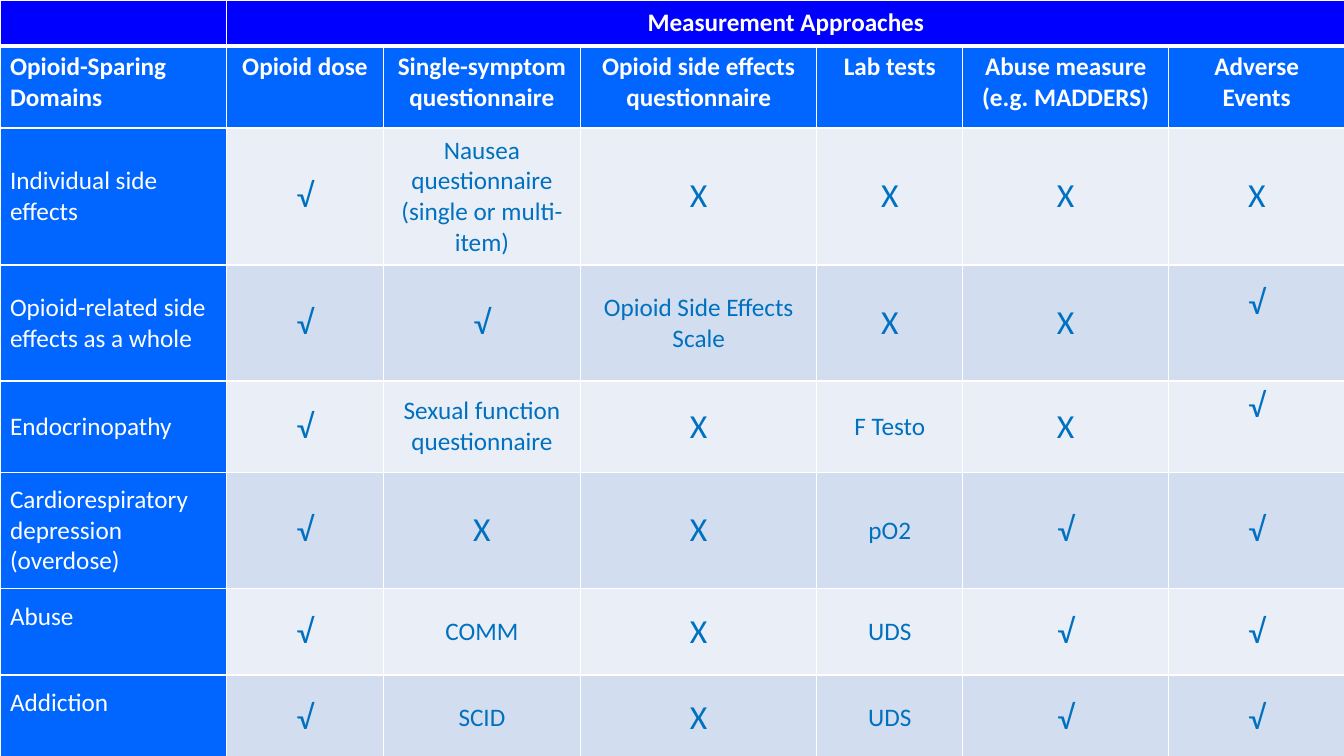
from lxml.etree import SubElement as Sub
from pptx import Presentation
from pptx.dml.color import RGBColor as RGB
from pptx.enum.text import MSO_ANCHOR as Anchor, PP_ALIGN as Align
from pptx.oxml.ns import qn
from pptx.util import Inches, Pt

HUES = {"top": "0000FF", "head": "0066FF", "pale": "EAEFF7", "deep": "D2DEEF",
        "ink": "0070C0", "white": "FFFFFF"}
WIDTHS = [2.25, 1.55, 1.96, 2.34, 1.45, 2.04, 1.75]
HEIGHTS = [0.46, 0.81, 1.36, 1.15, 0.86, 1.15, 0.86, 0.86]
ROWS = [
    ["", "Measurement Approaches", "", "", "", "", ""],
    ["Opioid-Sparing Domains", "Opioid dose", "Single-symptom questionnaire",
     "Opioid side effects questionnaire", "Lab tests",
     "Abuse measure (e.g. MADDERS)", "Adverse Events"],
    ["Individual side effects", "√", "Nausea questionnaire (single or multi-item)",
     "X", "X", "X", "X"],
    ["Opioid-related side effects as a whole", "√", "√",
     "Opioid Side Effects Scale", "X", "X", "√"],
    ["Endocrinopathy", "√", "Sexual function questionnaire", "X", "F Testo", "X", "√"],
    ["Cardiorespiratory depression (overdose)", "√", "X", "X", "pO2", "√", "√"],
    ["Abuse", "√", "COMM", "X", "UDS", "√", "√"],
    ["Addiction", "√", "SCID", "X", "UDS", "√", "√"],
]
# Bottom margins that lift the text of a few cells above the middle
LIFTS = {(3, 6): 0.45, (4, 6): 0.45, (6, 0): 0.35, (7, 0): 0.35}


def edge(cell, low):
    """Draw white borders round a cell, the bottom one low points wide."""
    props = cell._tc.get_or_add_tcPr()
    for spot, side in enumerate("LRTB"):
        size = low if side == "B" else 1
        line = Sub(props, qn(f"a:ln{side}"), w=str(Pt(size)))
        fill = Sub(line, qn("a:solidFill"))
        Sub(fill, qn("a:srgbClr"), val=HUES["white"])
        props.remove(line)
        props.insert(spot, line)


deck = Presentation()
deck.slide_width, deck.slide_height = Inches(13.33), Inches(7.5)
slide = deck.slides.add_slide(deck.slide_layouts[6])
frame = slide.shapes.add_table(len(ROWS), len(WIDTHS), 0, 0,
                               Inches(sum(WIDTHS)), Inches(sum(HEIGHTS)))
grid = frame.table
for col, width in zip(grid.columns, WIDTHS):
    col.width = Inches(width)
for row, height in zip(grid.rows, HEIGHTS):
    row.height = Inches(height)
grid.cell(0, 1).merge(grid.cell(0, 6))

for r, row in enumerate(ROWS):
    for c, text in enumerate(row):
        cell = grid.cell(r, c)
        body = r > 1 and c > 0
        if r == 0:
            hue = "top"
        elif body:
            hue = "deep" if r % 2 else "pale"
        else:
            hue = "head"
        cell.fill.solid()
        cell.fill.fore_color.rgb = RGB.from_string(HUES[hue])
        edge(cell, 1 if r else 3)
        cell.vertical_anchor = Anchor.TOP if r == 1 else Anchor.MIDDLE
        cell.margin_bottom = Inches(LIFTS.get((r, c), 0.05))
        if not text:
            continue
        para = cell.text_frame.paragraphs[0]
        para.text = text
        para.alignment = Align.CENTER if c else Align.LEFT
        font = para.runs[0].font
        font.name = "Calibri"
        font.size = Pt(24 if text in "√X" else 18)
        font.bold = r < 2
        font.color.rgb = RGB.from_string(HUES["ink" if body else "white"])

deck.save("out.pptx")
